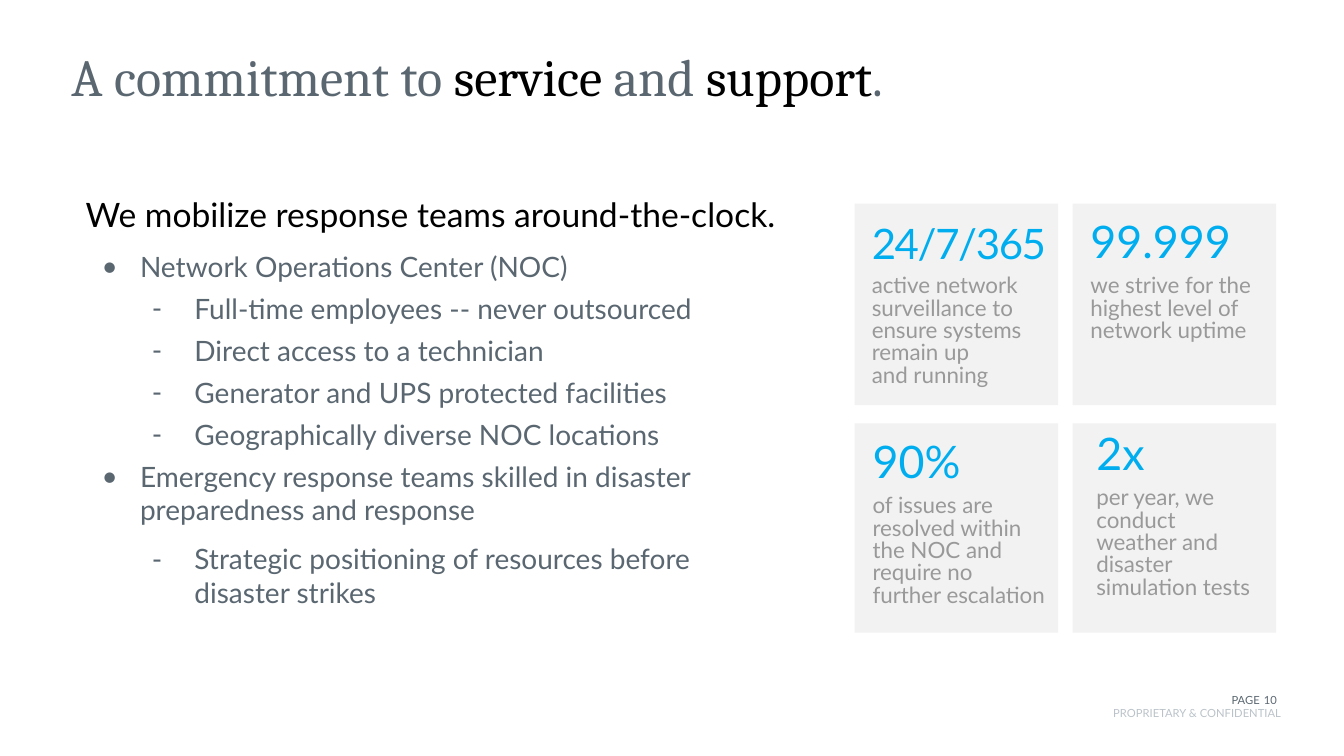
"""Build the service and support slide."""
from dataclasses import dataclass
from typing import Any

from lxml.etree import SubElement
from pptx import Presentation
from pptx.dml.color import RGBColor
from pptx.enum.shapes import MSO_SHAPE
from pptx.enum.text import MSO_ANCHOR, MSO_AUTO_SIZE, PP_ALIGN
from pptx.oxml.ns import qn
from pptx.util import Cm, Pt

SLATE, BLACK, BLUE = "5A6771", "000000", "00AEEF"
GREY, PALE, PANEL = "99999A", "BBC3C9", "F2F2F2"
NO_MARGINS = {"margin_left": 0, "margin_top": 0, "margin_right": 0, "margin_bottom": 0}
CARD_LEFT, CARD_TOP = 21.54, 5.13
COLUMN_PITCH, ROW_PITCH = 5.49, 5.54
CARD_WIDTH, ROW_HEIGHTS = 5.13, (5.08, 5.27)


@dataclass
class Box:
    """Position and size in centimetres."""
    left: float
    top: float
    width: float
    height: float

    def lengths(self) -> tuple[int, ...]:
        """Return the four values as slide lengths."""
        return tuple(Cm(value) for value in (self.left, self.top, self.width, self.height))


@dataclass
class Card:
    """A statistic in a grid cell."""
    column: int
    row: int
    text_box: Box
    figure: str
    caption: str
    figure_size: float = 32
    spacing: int = 0


@dataclass
class Bullet:
    """A bulleted line of the body."""
    level: int
    text: str
    space_after: float = 6


@dataclass
class Footer:
    """A small line at the foot of the slide."""
    box: Box
    text: str
    color: str
    anchor: MSO_ANCHOR


CARDS = [
    Card(1, 1, Box(27.38, 11.18, 4.5, 4.11), "2x",
         "per year, we conduct weather and disaster simulation tests"),
    Card(0, 1, Box(21.74, 11.38, 5.13, 4.11), "90%",
         "of issues are resolved within \nthe NOC and require no \nfurther escalation"),
    Card(1, 0, Box(27.23, 5.84, 5.11, 2.97), "99.999",
         "we strive for the highest level of network uptime"),
    Card(0, 0, Box(21.72, 5.84, 5.31, 4.11), "24/7/365",
         "active network surveillance to \nensure systems remain up \nand running", 30, -100),
]
BULLETS = [
    Bullet(1, "Network Operations Center (NOC)"),
    Bullet(2, "Full-time employees -- never outsourced"),
    Bullet(2, "Direct access to a technician"),
    Bullet(2, "Generator and UPS protected facilities"),
    Bullet(2, "Geographically diverse NOC locations"),
    Bullet(1, "Emergency response teams skilled in disaster preparedness and response", 10.7),
    Bullet(2, "Strategic positioning of resources before \ndisaster strikes"),
]
BULLET_STYLES = {1: ("•", 1.37, -0.97), 2: ("-", 2.74, -1.07)}
FOOTERS = [
    Footer(Box(25.2, 17.81, 7.09, 0.33), "PROPRIETARY & CONFIDENTIAL", PALE, MSO_ANCHOR.TOP),
    Footer(Box(30.58, 17.32, 1.17, 0.48), "PAGE", SLATE, MSO_ANCHOR.BOTTOM),
    Footer(Box(31.5, 17.32, 0.68, 0.48), "10", SLATE, MSO_ANCHOR.BOTTOM),
]
TITLE_RUNS = [("A commitment to ", SLATE), ("service", BLACK), (" and ", SLATE),
              ("support", BLACK), (".", SLATE)]


def rgb(value: str) -> RGBColor:
    """Turn a hex string into a colour."""
    return RGBColor.from_string(value)


def apply_format(target: Any, values: dict[str, Any]) -> None:
    """Set each named attribute on the target."""
    for name, value in values.items():
        setattr(target, name, value)


def add_text(paragraph: Any, text: str, size: float, color: str,
             font: str = "Lato", spacing: int = 0) -> None:
    """Add formatted runs, with a line break at each newline."""
    for index, line in enumerate(text.split("\n")):
        if index:
            paragraph.add_line_break()
        run = paragraph.add_run()
        run.text = line
        apply_format(run.font, {"name": font, "size": Pt(size), "bold": False})
        run.font.color.rgb = rgb(color)
        if spacing:
            run.font._element.set("spc", str(spacing))


def add_frame(slide: Any, box: Box, values: dict[str, Any]) -> Any:
    """Add a wrapping text box and return its frame."""
    frame = slide.shapes.add_textbox(*box.lengths()).text_frame
    apply_format(frame, {"word_wrap": True, **values})
    return frame


def add_title(slide: Any) -> None:
    """Place and fill the title placeholder."""
    title = slide.shapes.title
    title.left, title.top, title.width, title.height = Box(1.8, 0.99, 29.34, 1.6).lengths()
    frame = title.text_frame
    apply_format(frame, {**NO_MARGINS, "margin_top": Cm(0.13), "word_wrap": True,
                         "vertical_anchor": MSO_ANCHOR.TOP, "auto_size": MSO_AUTO_SIZE.NONE})
    paragraph = frame.paragraphs[0]
    paragraph.alignment = PP_ALIGN.LEFT
    for text, color in TITLE_RUNS:
        add_text(paragraph, text, 37.3, color, "Cambria")


def add_bullet(frame: Any, bullet: Bullet) -> None:
    """Add one bulleted paragraph."""
    character, margin, indent = BULLET_STYLES[bullet.level]
    paragraph = frame.add_paragraph()
    apply_format(paragraph, {"level": bullet.level, "space_after": Pt(bullet.space_after)})
    properties = paragraph._p.get_or_add_pPr()
    properties.set("marL", str(Cm(margin)))
    properties.set("indent", str(Cm(indent)))
    SubElement(properties, qn("a:buFont")).set("typeface", "Lato")
    SubElement(properties, qn("a:buChar")).set("char", character)
    add_text(paragraph, bullet.text, 20, SLATE)


def add_body(slide: Any) -> None:
    """Add the lead sentence and its bullets."""
    frame = add_frame(slide, Box(2.16, 4.78, 18.01, 12.12),
                      {**NO_MARGINS, "margin_top": Cm(0.18), "margin_bottom": Cm(0.18)})
    lead = frame.paragraphs[0]
    apply_format(lead, {"line_spacing": Pt(26.7), "space_after": Pt(10.7)})
    add_text(lead, "We mobilize response teams around-the-clock.", 24, BLACK)
    for bullet in BULLETS:
        add_bullet(frame, bullet)


def add_card(slide: Any, card: Card) -> None:
    """Add a panel with its figure and caption."""
    box = Box(CARD_LEFT + card.column * COLUMN_PITCH, CARD_TOP + card.row * ROW_PITCH,
              CARD_WIDTH, ROW_HEIGHTS[card.row])
    panel = slide.shapes.add_shape(MSO_SHAPE.RECTANGLE, *box.lengths())
    panel.shadow.inherit = False
    panel.fill.solid()
    panel.fill.fore_color.rgb = rgb(PANEL)
    panel.line.fill.background()
    frame = add_frame(slide, card.text_box, {"auto_size": MSO_AUTO_SIZE.SHAPE_TO_FIT_TEXT})
    figure, caption = frame.paragraphs[0], frame.add_paragraph()
    apply_format(figure, {"line_spacing": Pt(22), "space_after": Pt(6)})
    add_text(figure, card.figure, card.figure_size, BLUE, spacing=card.spacing)
    caption.line_spacing = Pt(16)
    add_text(caption, card.caption, 16, GREY)


def add_footer(slide: Any, footer: Footer) -> None:
    """Add a right-aligned footer line."""
    frame = add_frame(slide, footer.box, {**NO_MARGINS, "vertical_anchor": footer.anchor})
    frame.paragraphs[0].alignment = PP_ALIGN.RIGHT
    add_text(frame.paragraphs[0], footer.text, 8, footer.color)


def main() -> None:
    """Build and save the presentation."""
    presentation = Presentation()
    apply_format(presentation, {"slide_width": Cm(33.87), "slide_height": Cm(19.05)})
    slide = presentation.slides.add_slide(presentation.slide_layouts[5])
    add_title(slide)
    add_body(slide)
    for card in CARDS:
        add_card(slide, card)
    for footer in FOOTERS:
        add_footer(slide, footer)
    presentation.save("out.pptx")


if __name__ == "__main__":
    main()
